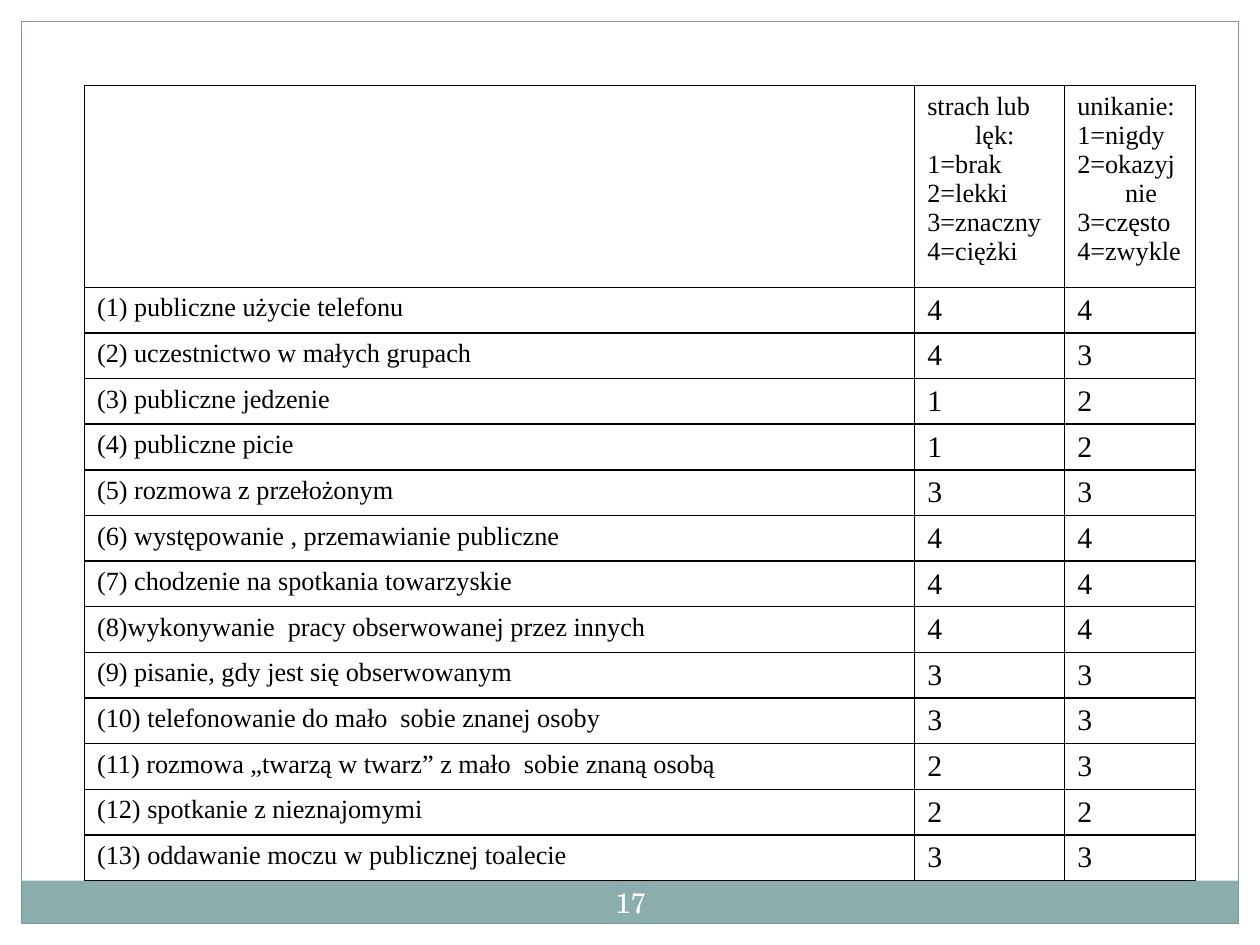
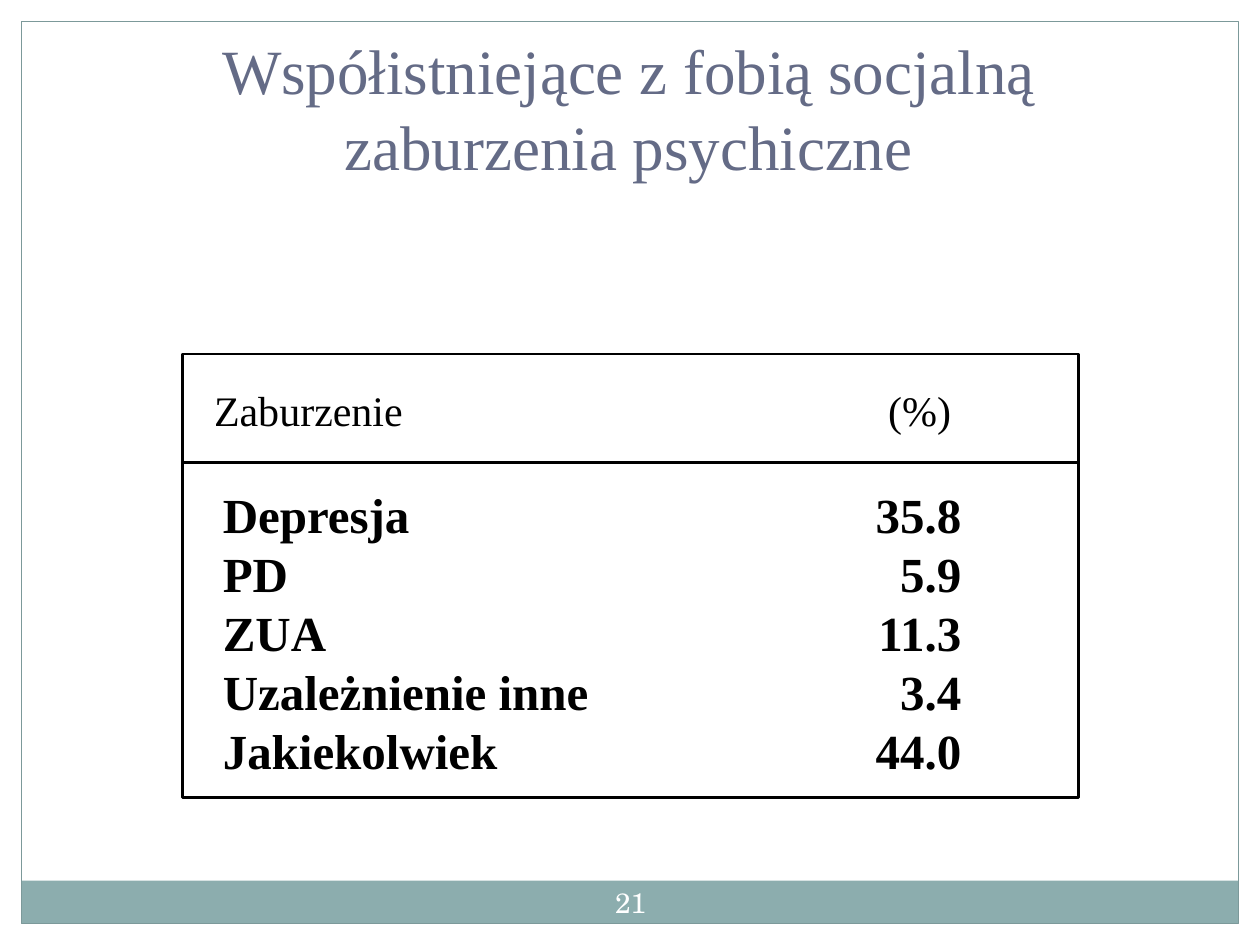
from lxml import etree
from pptx import Presentation
from pptx.dml.color import RGBColor
from pptx.enum.shapes import MSO_CONNECTOR, MSO_SHAPE
from pptx.enum.text import MSO_ANCHOR, MSO_AUTO_SIZE, PP_ALIGN
from pptx.oxml.ns import qn
from pptx.util import Inches, Pt

RECTANGLE = MSO_SHAPE.RECTANGLE
STRAIGHT = MSO_CONNECTOR.STRAIGHT
CENTER = PP_ALIGN.CENTER
MIDDLE, BOTTOM = MSO_ANCHOR.MIDDLE, MSO_ANCHOR.BOTTOM
NO_AUTOFIT = MSO_AUTO_SIZE.NONE

WIDTH, HEIGHT = 10, 7.5
MARGIN = 0.17
BAND_TOP = 6.99
WHITE, BLACK = "FFFFFF", "000000"
BAND, FRAME, TITLE = "8CADAE", "7C999A", "646B86"
SERIF, NUMBER_FONT = "Times New Roman", "TeX Gyre Schola"
HANGING_INDENT = 0.38

TITLE_ONLY, BLANK = 5, 6

SCALE_HEADER = [
    "",
    "strach lub lęk:\n1=brak\n2=lekki\n3=znaczny\n4=ciężki",
    "unikanie:\n1=nigdy\n2=okazyjnie\n3=często\n4=zwykle",
]
SITUATIONS = [
    ("(1) publiczne użycie telefonu", 4, 4),
    ("(2) uczestnictwo w małych grupach", 4, 3),
    ("(3) publiczne jedzenie", 1, 2),
    ("(4) publiczne picie", 1, 2),
    ("(5) rozmowa z przełożonym", 3, 3),
    ("(6) występowanie , przemawianie publiczne", 4, 4),
    ("(7) chodzenie na spotkania towarzyskie", 4, 4),
    ("(8)wykonywanie  pracy obserwowanej przez innych", 4, 4),
    ("(9) pisanie, gdy jest się obserwowanym", 3, 3),
    ("(10) telefonowanie do mało  sobie znanej osoby", 3, 3),
    ("(11) rozmowa „twarzą w twarz” z mało  sobie znaną osobą", 2, 3),
    ("(12) spotkanie z nieznajomymi", 2, 2),
    ("(13) oddawanie moczu w publicznej toalecie", 3, 3),
]
DISORDERS = [
    ("Depresja", "35.8"),
    ("PD", "5.9"),
    ("ZUA", "11.3"),
    ("Uzależnienie inne", "3.4"),
    ("Jakiekolwiek", "44.0"),
]


def rgb(color):
    return RGBColor.from_string(color)


def box(*lengths):
    return [Inches(length) for length in lengths]


def write(frame, text, size, color=BLACK, font=SERIF, bold=False, align=None):
    frame.text = text
    for paragraph in frame.paragraphs:
        paragraph.alignment = align
        for run in paragraph.runs:
            run.font.size = Pt(size)
            run.font.name = font
            run.font.bold = bold
            run.font.color.rgb = rgb(color)


def add_rectangle(slide, place, fill=None, line=None, weight=0.75):
    shape = slide.shapes.add_shape(RECTANGLE, *box(*place))
    shape.shadow.inherit = False
    if fill:
        shape.fill.solid()
        shape.fill.fore_color.rgb = rgb(fill)
    else:
        shape.fill.background()
    if line:
        shape.line.color.rgb = rgb(line)
        shape.line.width = Pt(weight)
    else:
        shape.line.fill.background()


def add_text(slide, place, text, size, **style):
    frame = slide.shapes.add_textbox(*box(*place)).text_frame
    frame.word_wrap = True
    write(frame, text, size, **style)
    return frame


def add_tab_stop(frame, position, kind):
    for paragraph in frame.paragraphs:
        tabs = etree.SubElement(paragraph._p.get_or_add_pPr(), qn("a:tabLst"))
        etree.SubElement(tabs, qn("a:tab"), pos=str(Inches(position)), algn=kind)


def add_rule(slide, left, right, top):
    rule = slide.shapes.add_connector(STRAIGHT, *box(left, top, right, top))
    rule.line.color.rgb = rgb(BLACK)
    rule.line.width = Pt(1.5)
    etree.SubElement(rule._element.spPr, qn("a:effectLst"))


def add_slide(deck, layout, number):
    """Add a slide with the shared margins, band, frame and page number."""
    slide = deck.slides.add_slide(deck.slide_layouts[layout])
    for margin in [
        (0, 0, WIDTH, MARGIN),
        (WIDTH - MARGIN, 0, MARGIN, HEIGHT),
        (0, 0, MARGIN, HEIGHT),
    ]:
        add_rectangle(slide, margin, fill=WHITE)
    inner_width, inner_height = WIDTH - 2 * MARGIN, HEIGHT - 2 * MARGIN
    add_rectangle(slide, (MARGIN, BAND_TOP, inner_width, 0.34), fill=BAND)
    add_rectangle(slide, (MARGIN, MARGIN, inner_width, inner_height), line=FRAME)
    page = add_text(slide, (4.67, 6.92, 0.67, 0.48), str(number), 16,
                    color=WHITE, font=NUMBER_FONT, align=CENTER)
    page.vertical_anchor = MIDDLE
    page.margin_left = page.margin_right = Inches(0.05)
    return slide


def set_title(slide, text):
    title = slide.shapes.title
    title.left, title.top, title.width, title.height = box(0.7, 0.2, 8.58, 1.3)
    frame = title.text_frame
    frame.auto_size = NO_AUTOFIT
    frame.vertical_anchor = BOTTOM
    write(frame, text, 36, color=TITLE, align=CENTER)


def add_borders(cell):
    properties = cell._tc.get_or_add_tcPr()
    for position, side in enumerate(("lnL", "lnR", "lnT", "lnB")):
        border = etree.Element(qn(f"a:{side}"), w=str(Pt(1)))
        fill = etree.SubElement(border, qn("a:solidFill"))
        etree.SubElement(fill, qn("a:srgbClr"), val=BLACK)
        properties.insert(position, border)


def add_rating_table(slide, left, top, columns, header_height):
    """Add the ratings, with equal rows that end where the band begins."""
    rows = [SCALE_HEADER, *SITUATIONS]
    height = BAND_TOP - top
    row_height = (height - header_height) / len(SITUATIONS)
    place = box(left, top, sum(columns), height)
    table = slide.shapes.add_table(len(rows), len(columns), *place).table
    table.first_row = table.horz_banding = False
    for column, width in zip(table.columns, columns):
        column.width = Inches(width)
    for r, values in enumerate(rows):
        table.rows[r].height = Inches(row_height if r else header_height)
        for c, value in enumerate(values):
            cell = table.cell(r, c)
            cell.fill.background()
            cell.margin_bottom = Inches(0.02)
            write(cell.text_frame, str(value), 17 if r and c else 15)
            for paragraph in cell.text_frame.paragraphs:
                properties = paragraph._p.get_or_add_pPr()
                properties.set("marL", str(Inches(HANGING_INDENT)))
                properties.set("indent", str(-Inches(HANGING_INDENT)))
            add_borders(cell)


def add_disorder_panel(slide, left, top, width, height, header_height):
    header = add_text(slide, (left + 0.15, top + 0.19, width, 0.6),
                      "Zaburzenie\t(%)", 24)
    add_tab_stop(header, 5.6, "ctr")
    lines = "\n".join("\t".join(disorder) for disorder in DISORDERS)
    shares = add_text(slide, (left + 0.22, top + 0.99, width, 2.44),
                      lines, 28, bold=True)
    add_tab_stop(shares, 5.57, "dec")
    add_rectangle(slide, (left, top, width, height), line=BLACK, weight=1.5)
    add_rule(slide, left, left + width, top + header_height)


def main():
    deck = Presentation()
    deck.slide_width, deck.slide_height = box(WIDTH, HEIGHT)

    ratings = add_slide(deck, BLANK, 17)
    add_rating_table(ratings, 0.67, 0.68, (6.59, 1.19, 1.04), 1.6)

    comorbidity = add_slide(deck, TITLE_ONLY, 21)
    set_title(comorbidity, "Współistniejące z fobią socjalną zaburzenia psychiczne")
    add_disorder_panel(comorbidity, 1.45, 2.81, 7.11, 3.52, 0.86)

    deck.save("out.pptx")


if __name__ == "__main__":
    main()
